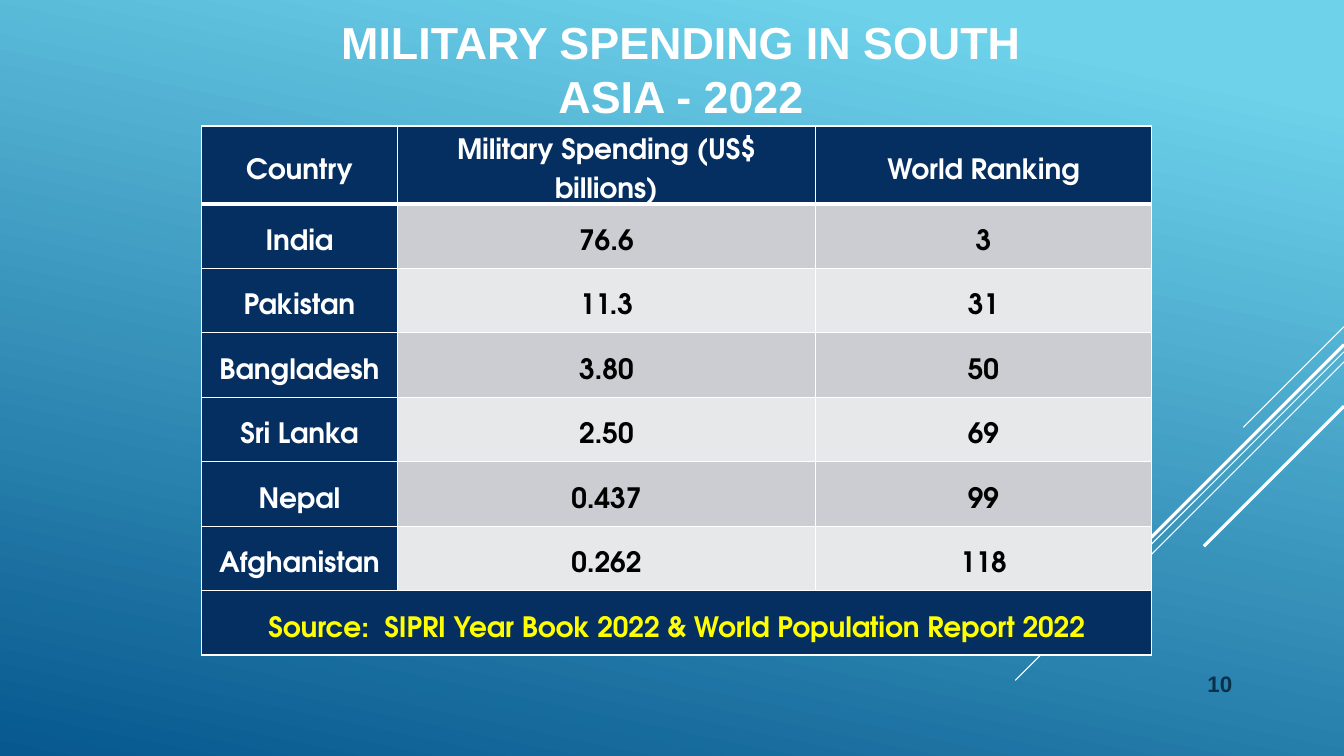
"""Builds the slide on military spending in South Asia."""
from pptx import Presentation
from pptx.dml.color import RGBColor
from pptx.enum.shapes import MSO_CONNECTOR
from pptx.enum.text import MSO_ANCHOR, PP_ALIGN
from pptx.oxml import parse_xml
from pptx.oxml.ns import nsdecls
from pptx.util import Inches, Pt

STRAIGHT = MSO_CONNECTOR.STRAIGHT
MIDDLE, BOTTOM = MSO_ANCHOR.MIDDLE, MSO_ANCHOR.BOTTOM
CENTER, RIGHT = PP_ALIGN.CENTER, PP_ALIGN.RIGHT

COLORS = {
    "sky": "6ED2EB", "deep": "06588E", "navy": "052F61", "band_dark": "CCCDD2",
    "band_light": "E7E8EA", "white": "FFFFFF", "black": "000000",
    "yellow": "FFFF00", "number": "0A304A",
}
TITLE = "MILITARY SPENDING IN SOUTH ASIA - 2022"
PAGE_NUMBER = "10"
HEADER = ("Country", "Military Spending (US$ billions)", "World Ranking")
COUNTRIES = [
    ("India", "76.6", "3"),
    ("Pakistan", "11.3", "31"),
    ("Bangladesh", "3.80", "50"),
    ("Sri Lanka", "2.50", "69"),
    ("Nepal", "0.437", "99"),
    ("Afghanistan", "0.262", "118"),
]
SOURCE = "Source:  SIPRI Year Book 2022 & World Population Report 2022"
COL_WIDTHS = (1.94, 4.15, 3.33)
ROW_HEIGHT = 0.64
SLIDE_W, SLIDE_H = 13.33, 7.5
DIAGONALS = [(3.24, 1, 0.75), (3.49, 3.26, 0.75), (3.59, 2.07, 0.75),
             (3.42, 1.91, 2.25), (4.03, 1.39, 2.25)]
TITLE_FONT = {"size": Pt(32), "name": "Arial", "bold": True}
NUMBER_FONT = {"size": Pt(16), "name": "Arial", "bold": True}
TABLE_FONT = {"size": Pt(20), "name": "TeX Gyre Adventor", "bold": True}


def rgb(name):
    return RGBColor.from_string(COLORS[name])


def write(tf, text, font, color, align):
    p = tf.paragraphs[0]
    p.alignment = align
    r = p.add_run()
    r.text = text
    for key, value in font.items():
        setattr(r.font, key, value)
    r.font.color.rgb = rgb(color)
    return p, r


def add_background(s):
    fill = s.background.fill
    fill.gradient()
    fill.gradient_angle = 258
    for stop, name, position in zip(fill.gradient_stops, ("sky", "deep"), (0.1, 1)):
        stop.color.rgb = rgb(name)
        stop.position = position


def add_diagonals(s):
    for top, run, weight in DIAGONALS:
        line = s.shapes.add_connector(
            STRAIGHT, Inches(SLIDE_W), Inches(top),
            Inches(SLIDE_W - run), Inches(top + run))
        line.line.color.rgb = rgb("white")
        line.line.width = Pt(weight)
        line._element.spPr.append(parse_xml(f"<a:effectLst {nsdecls('a')}/>"))


def add_text(s, box, text, font, color, align, anchor):
    tf = s.shapes.add_textbox(*map(Inches, box)).text_frame
    tf.word_wrap = True
    tf.vertical_anchor = anchor
    return write(tf, text, font, color, align)[1]


def add_text_shadow(r):
    shadow = parse_xml(
        f"<a:effectLst {nsdecls('a')}>"
        '<a:outerShdw blurRad="38100" dist="38100" dir="2700000" algn="tl">'
        '<a:srgbClr val="000000"><a:alpha val="43000"/></a:srgbClr>'
        "</a:outerShdw></a:effectLst>")
    r.font._element.solidFill.addnext(shadow)


def set_borders(cell, widths):
    tc_pr = cell._tc.get_or_add_tcPr()
    for i, (side, width) in enumerate(zip("LRTB", widths)):
        tc_pr.insert(i, parse_xml(
            f'<a:ln{side} {nsdecls("a")} w="{Pt(width)}"><a:solidFill>'
            f'<a:srgbClr val="{COLORS["white"]}"/></a:solidFill></a:ln{side}>'))


def format_cell(cell, text, fill, color, widths):
    cell.fill.solid()
    cell.fill.fore_color.rgb = rgb(fill)
    cell.vertical_anchor = MIDDLE
    cell.margin_left = cell.margin_right = Inches(0.07)
    cell.margin_top = cell.margin_bottom = 0
    p, r = write(cell.text_frame, text, TABLE_FONT, color, CENTER)
    p.line_spacing = 1.5
    r.font._element.set("spc", "-10")
    set_borders(cell, widths)


def add_spending_table(s):
    rows = [HEADER, *COUNTRIES, (SOURCE, "", "")]
    last = len(rows) - 1
    table = s.shapes.add_table(
        len(rows), len(HEADER), Inches(2), Inches(1.25),
        Inches(sum(COL_WIDTHS)), Inches(ROW_HEIGHT * len(rows))).table
    for col, width in zip(table.columns, COL_WIDTHS):
        col.width = Inches(width)
    for i, values in enumerate(rows):
        table.rows[i].height = Inches(ROW_HEIGHT)
        widths = (1, 1, 3 if i == 1 else 1, 3 if i == 0 else 1)
        for j, text in enumerate(values):
            fill, color = "navy", "yellow" if i == last else "white"
            if 0 < i < last and j > 0:
                fill, color = "band_dark" if i % 2 else "band_light", "black"
            format_cell(table.cell(i, j), text, fill, color, widths)
    table.cell(last, 0).merge(table.cell(last, len(HEADER) - 1))


def main():
    prs = Presentation()
    prs.slide_width, prs.slide_height = Inches(SLIDE_W), Inches(SLIDE_H)
    s = prs.slides.add_slide(prs.slide_layouts[6])
    add_background(s)
    add_diagonals(s)
    add_spending_table(s)
    title = add_text(s, (2.82, 0.11, 7.87, 1.14), TITLE, TITLE_FONT,
                     "white", CENTER, MIDDLE)
    add_text_shadow(title)
    add_text(s, (11.5, 6.56, 0.82, 0.4), PAGE_NUMBER, NUMBER_FONT,
             "number", RIGHT, BOTTOM)
    prs.save("out.pptx")


if __name__ == "__main__":
    main()
